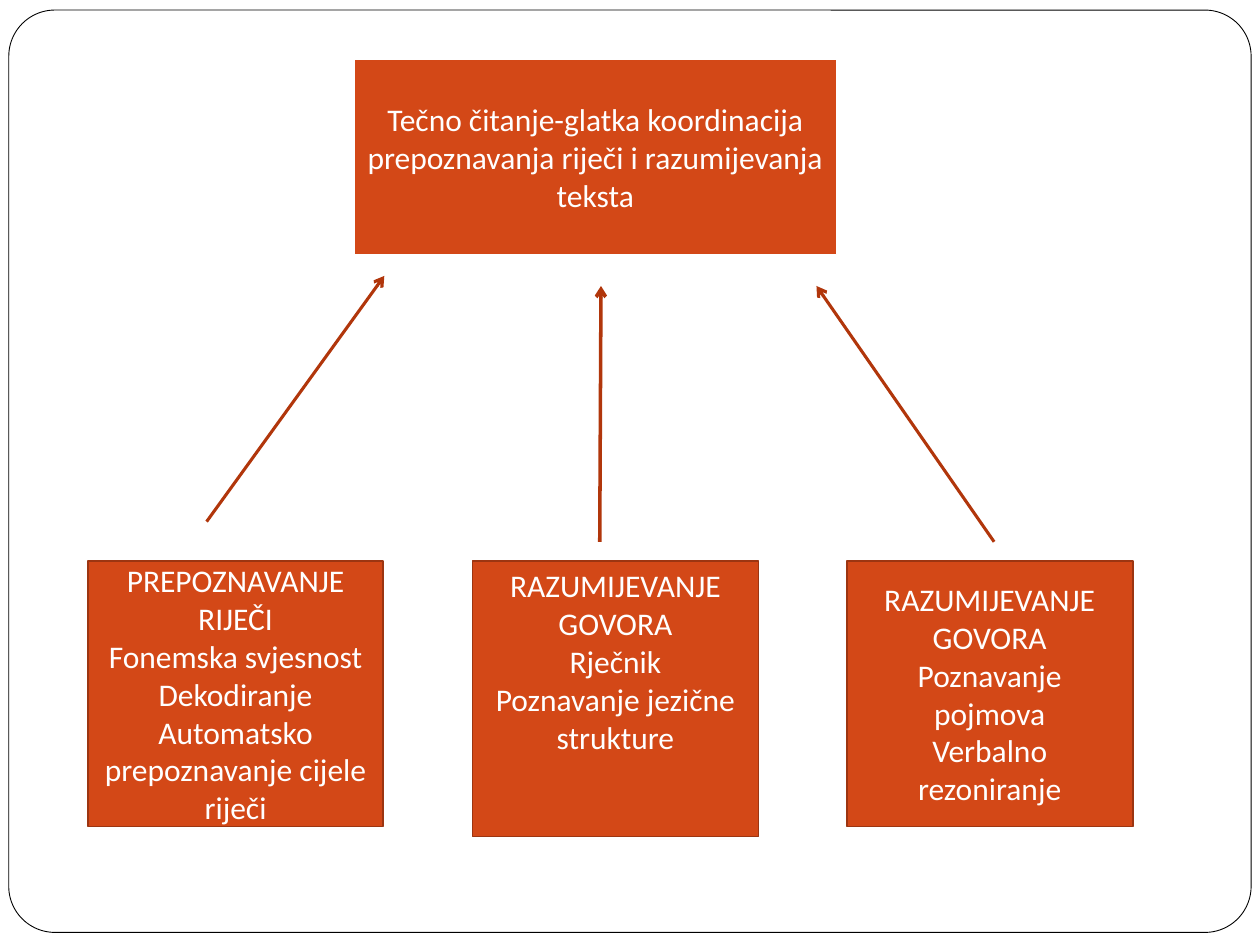
import pptx
import pptx.dml.color
import pptx.enum.shapes
import pptx.enum.text
import pptx.oxml.ns
import pptx.util
from lxml import etree

COLS, ROWS = 100, 75
CELL = pptx.util.Inches(10) // COLS
WHITE, BLACK = "FFFFFF", "000000"
ORANGE, RUST, ARROW = "D34817", "9C3511", "B1360B"
LOW_TOP = 44.5
SHAPES = pptx.enum.shapes.MSO_SHAPE

# left, width, height, bottom inset, lines of text
SKILLS = [
    (7, 23.4, 21.1, 0.5, ["PREPOZNAVANJE RIJEČI", "Fonemska svjesnost", "Dekodiranje",
                          "Automatsko prepoznavanje cijele riječi"]),
    (37.5, 22.7, 21.9, 6.5, ["RAZUMIJEVANJE GOVORA", "Rječnik",
                             "Poznavanje jezične strukture"]),
    (67.2, 22.7, 21.1, 0.5, ["RAZUMIJEVANJE GOVORA", "Poznavanje pojmova",
                             "Verbalno rezoniranje"]),
]

# start column and row, end column and row, width in points
ARROWS = [
    (16.4, 41.4, 30.5, 21.9, 1.75),
    (47.6, 43, 47.7, 22.7, 2),
    (78.9, 43, 64.8, 22.7, 1.75),
]


def grid(*cells):
    """Turn grid columns and rows into lengths."""
    return [round(n * CELL) for n in cells]


def paint(form, color):
    form.rgb = pptx.dml.color.RGBColor.from_string(color)


def stroke(line, color, width):
    line.fill.solid()
    paint(line.color, color)
    line.width = pptx.util.Pt(width)


def add_form(slide, kind, place, fill, edge, width):
    form = slide.shapes.add_shape(kind, *grid(*place))
    form.shadow.inherit = False
    form.fill.solid()
    paint(form.fill.fore_color, fill)
    stroke(form.line, edge, width)
    return form


def add_box(slide, place, lines, edge, inset=0.5):
    box = add_form(slide, SHAPES.RECTANGLE, place, ORANGE, edge, 1)
    frame = box.text_frame
    frame.word_wrap = True
    frame.vertical_anchor = pptx.enum.text.MSO_ANCHOR.MIDDLE
    frame.margin_bottom = grid(inset)[0]
    frame.text = "\n".join(lines)
    for para in frame.paragraphs:
        para.alignment = pptx.enum.text.PP_ALIGN.CENTER
        for run in para.runs:
            run.font.name = "Calibri"
            run.font.size = pptx.util.Pt(18)
            paint(run.font.color, WHITE)


def add_arrow(slide, ends, width):
    kind = pptx.enum.shapes.MSO_CONNECTOR.STRAIGHT
    arrow = slide.shapes.add_connector(kind, *grid(*ends))
    stroke(arrow.line, ARROW, width)
    qn = pptx.oxml.ns.qn
    props = arrow._element.spPr
    etree.SubElement(props.find(qn("a:ln")), qn("a:tailEnd"), type="arrow")
    etree.SubElement(props, qn("a:effectLst"))


def main():
    deck = pptx.Presentation()
    deck.slide_width, deck.slide_height = COLS * CELL, ROWS * CELL
    slide = deck.slides.add_slide(deck.slide_layouts[6])

    frame = add_form(slide, SHAPES.ROUNDED_RECTANGLE, (0.7, 0.8, 98.6, 73.2),
                     WHITE, BLACK, 0.5)
    frame.adjustments[0] = 0.05

    goal = "Tečno čitanje-glatka koordinacija prepoznavanja riječi i razumijevanja teksta"
    add_box(slide, (28.1, 4.7, 38.3, 15.5), [goal], WHITE)
    for left, width, height, inset, lines in SKILLS:
        add_box(slide, (left, LOW_TOP, width, height), lines, RUST, inset)
    for *ends, width in ARROWS:
        add_arrow(slide, ends, width)

    deck.save("out.pptx")


if __name__ == "__main__":
    main()
